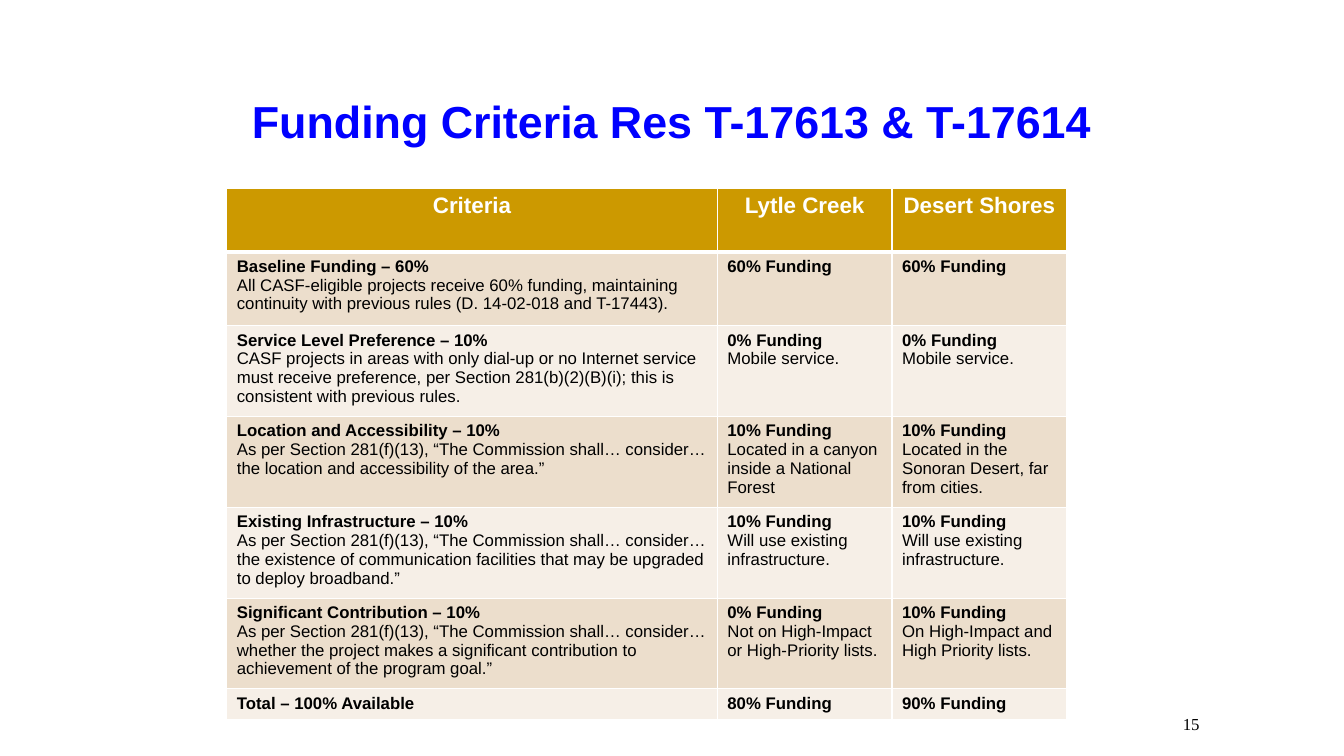
from lxml.etree import SubElement
from pptx import Presentation
from pptx.dml.color import RGBColor
from pptx.enum.text import MSO_ANCHOR, PP_ALIGN
from pptx.oxml.ns import qn
from pptx.util import Emu, Pt

COLUMNS, ROWS = 160, 90
UNIT = 76200  # one square grid step: a twelfth of an inch

WHITE = RGBColor(0xFF, 0xFF, 0xFF)
BLACK = RGBColor(0x00, 0x00, 0x00)
BLUE = RGBColor(0x00, 0x00, 0xFF)
GOLD = RGBColor(0xCC, 0x99, 0x00)
SAND = RGBColor(0xEC, 0xDE, 0xCC)
CREAM = RGBColor(0xF6, 0xEF, 0xE7)

TITLE = dict(name="Arial", size=Pt(32), bold=True, color=BLUE)
HEADER = dict(name="Arial", size=Pt(16), bold=True, color=WHITE)
SCORE = dict(name="Arial", size=Pt(12), bold=True, color=BLACK)
DETAIL = dict(SCORE, bold=False)
PAGE_NUMBER = dict(name="Times New Roman", size=Pt(12), bold=False, color=BLACK)

QUOTE = "As per Section 281(f)(13), “The Commission shall… consider… "
HEADINGS = ["Criteria", "Lytle Creek", "Desert Shores"]
# Each cell holds a bold lead, then an optional explanation.
CRITERIA = [
    [("Baseline Funding – 60%",
      "All CASF-eligible projects receive 60% funding, maintaining continuity "
      "with previous rules (D. 14-02-018 and T-17443)."),
     ("60% Funding",), ("60% Funding",)],
    [("Service Level Preference – 10%",
      "CASF projects in areas with only dial-up or no Internet service must "
      "receive preference, per Section 281(b)(2)(B)(i); this is consistent "
      "with previous rules."),
     ("0% Funding", "Mobile service."),
     ("0% Funding", "Mobile service.")],
    [("Location and Accessibility – 10%",
      QUOTE + "the location and accessibility of the area.”"),
     ("10% Funding", "Located in a canyon inside a National Forest"),
     ("10% Funding", "Located in the Sonoran Desert, far from cities.")],
    [("Existing Infrastructure – 10%",
      QUOTE + "the existence of communication facilities that may be upgraded "
      "to deploy broadband.”"),
     ("10% Funding", "Will use existing infrastructure."),
     ("10% Funding", "Will use existing infrastructure.")],
    [("Significant Contribution – 10%",
      QUOTE + "whether the project makes a significant contribution to "
      "achievement of the program goal.”"),
     ("0% Funding", "Not on High-Impact or High-Priority lists."),
     ("10% Funding", "On High-Impact and High Priority lists.")],
    [("Total – 100% Available",), ("80% Funding",), ("90% Funding",)],
]
CRITERIA_WIDTHS = [58.4, 20.8, 20.8]
CRITERIA_HEIGHTS = [7.6, 8.8] + [10.2] * 4 + [3.7]


def grid(steps):
    return Emu(round(steps * UNIT))


class SlideBuilder:
    """Places styled elements on one slide, measured in grid steps."""

    def __init__(self, presentation):
        self.slide = presentation.slides.add_slide(presentation.slide_layouts[6])

    def fill_paragraph(self, paragraph, text, style, align):
        paragraph.alignment = align
        run = paragraph.add_run()
        run.text = text
        for attribute, value in style.items():
            if attribute == "color":
                run.font.color.rgb = value
            else:
                setattr(run.font, attribute, value)

    def text(self, box, text, style, align, anchor):
        frame = self.slide.shapes.add_textbox(*map(grid, box)).text_frame
        frame.word_wrap = True
        frame.vertical_anchor = anchor
        self.fill_paragraph(frame.paragraphs[0], text, style, align)

    def cell(self, cell, texts, styles, align, fill):
        cell.fill.solid()
        cell.fill.fore_color.rgb = fill
        frame = cell.text_frame
        for index, (text, style) in enumerate(zip(texts, styles)):
            paragraph = frame.add_paragraph() if index else frame.paragraphs[0]
            self.fill_paragraph(paragraph, text, style, align)

    def borders(self, cell, top, bottom):
        """Draw white edges; top and bottom are widths in points."""
        properties = cell._tc.get_or_add_tcPr()
        widths = {"a:lnL": 1, "a:lnR": 1, "a:lnT": top, "a:lnB": bottom}
        for position, (edge, width) in enumerate(widths.items()):
            line = SubElement(properties, qn(edge), w=str(Pt(width)))
            fill = SubElement(line, qn("a:solidFill"))
            SubElement(fill, qn("a:srgbClr"), val=str(WHITE))
            properties.insert(position, line)

    def table(self, left, top, widths, heights, headings, body):
        box = left, top, sum(widths), sum(heights)
        table = self.slide.shapes.add_table(
            len(heights), len(widths), *map(grid, box)).table
        for column, width in zip(table.columns, widths):
            column.width = grid(width)
        for row, height in zip(table.rows, heights):
            row.height = grid(height)
        for column, heading in enumerate(headings):
            header = table.cell(0, column)
            self.cell(header, [heading], [HEADER], PP_ALIGN.CENTER, GOLD)
            self.borders(header, 1, 3)
        for row, entries in enumerate(body, start=1):
            band = SAND if row % 2 else CREAM
            for column, texts in enumerate(entries):
                entry = table.cell(row, column)
                self.cell(entry, texts, [SCORE, DETAIL], PP_ALIGN.LEFT, band)
                self.borders(entry, 3 if row == 1 else 1, 1)


def main():
    presentation = Presentation()
    presentation.slide_width = grid(COLUMNS)
    presentation.slide_height = grid(ROWS)
    builder = SlideBuilder(presentation)
    builder.text((8, 10, 144, 8.6), "Funding Criteria Res T-17613 & T-17614",
                 TITLE, PP_ALIGN.CENTER, MSO_ANCHOR.MIDDLE)
    builder.text((114.7, 82, 29.3, 6), "15",
                 PAGE_NUMBER, PP_ALIGN.RIGHT, MSO_ANCHOR.BOTTOM)
    builder.table(27, 22.4, CRITERIA_WIDTHS, CRITERIA_HEIGHTS, HEADINGS, CRITERIA)
    presentation.save("out.pptx")


if __name__ == "__main__":
    main()
